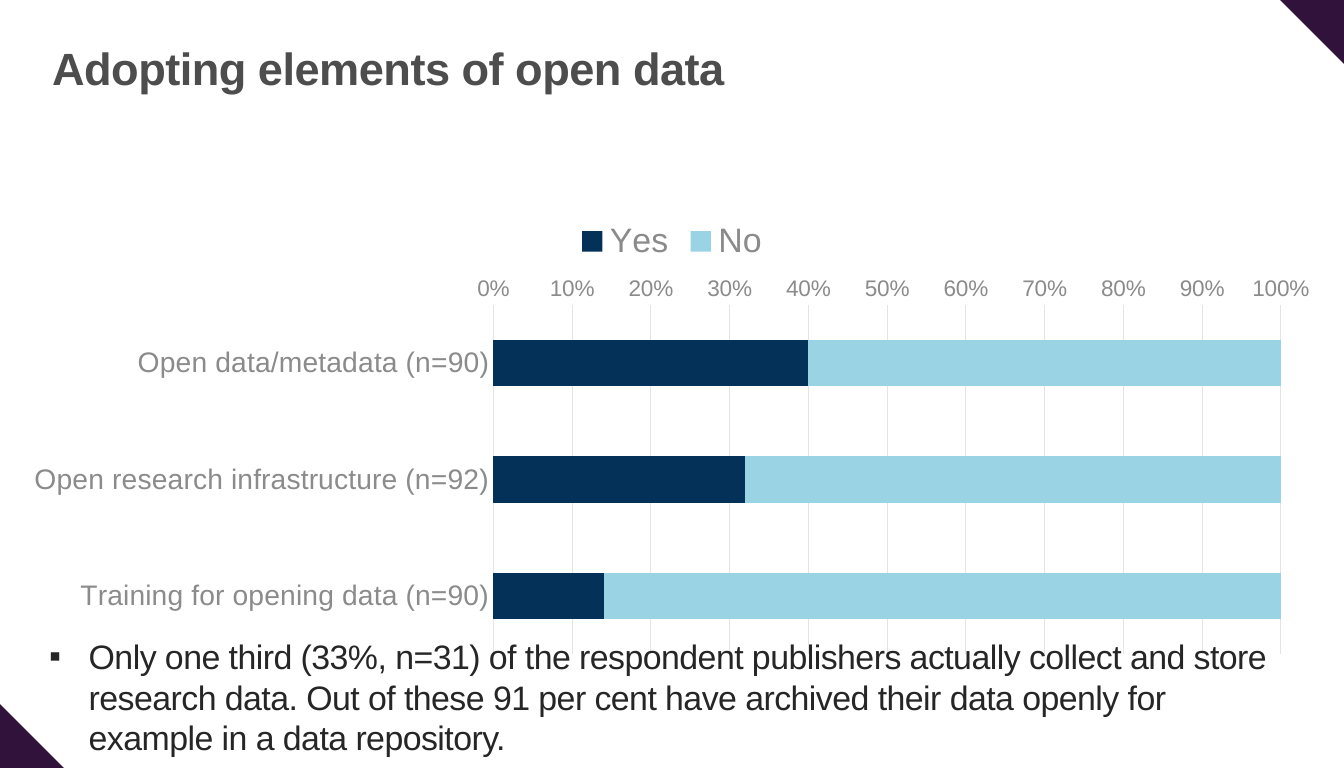
"""Build the slide on adopting elements of open data, with a stacked bar chart."""
import pptx
import pptx.chart.data
import pptx.dml.color
import pptx.enum.chart
import pptx.enum.shapes
import pptx.enum.text
import pptx.oxml
import pptx.oxml.ns
import pptx.util

COLORS = {"corner": "30123A", "title": "4D4D4D", "body": "262626", "label": "8B8B8B",
          "grid": "E4E4E4", "Yes": "043158", "No": "99D3E4"}
FONT = "Arial"
ANSWERS = {"Yes": (0.4, 0.32, 0.14), "No": (0.6, 0.68, 0.86)}
PLOT_SHARES = {"x": 0.3655, "y": 0.2125, "w": 0.593, "h": 0.767}


def style_font(font, size, color, bold=False):
    font.name, font.size, font.bold = FONT, pptx.util.Pt(size), bold
    font.color.rgb = pptx.dml.color.RGBColor.from_string(COLORS[color])


def add_text(slide, box, text, size, color, bold=False):
    frame = slide.shapes.add_textbox(*box).text_frame
    frame.word_wrap = True
    frame.vertical_anchor = pptx.enum.text.MSO_ANCHOR.TOP
    frame.margin_left = frame.margin_right = pptx.util.Inches(0.04)
    frame.margin_top = frame.margin_bottom = pptx.util.Inches(0.04)
    frame.text = text
    paragraph = frame.paragraphs[0]
    for run in paragraph.runs:
        style_font(run.font, size, color, bold)
        run.font._element.set("spc", "-40")
    return paragraph


deck = pptx.Presentation()
deck.slide_width, deck.slide_height = pptx.util.Inches(13.23), pptx.util.Inches(7.56)
width, height = deck.slide_width, deck.slide_height
slide = deck.slides.add_slide(deck.slide_layouts[6])

corner_size = pptx.util.Inches(0.89)
for center_x, center_y in ((0, height), (width, 0)):
    corner = slide.shapes.add_shape(
        pptx.enum.shapes.MSO_SHAPE.RECTANGLE, center_x - corner_size // 2,
        center_y - corner_size // 2, corner_size, corner_size)
    corner.rotation = 45
    corner.shadow.inherit = False
    corner.fill.solid()
    corner.fill.fore_color.rgb = pptx.dml.color.RGBColor.from_string(COLORS["corner"])
    corner.line.fill.background()

title_box = [int(width * 0.0357), int(height * 0.0525), int(width * 0.928), int(height * 0.155)]
title = add_text(slide, title_box, "Adopting elements of open data", 32, "title", bold=True)
title.line_spacing = 0.95

adoption = pptx.chart.data.CategoryChartData(number_format="0%")
adoption.categories = ["Open data/metadata (n=90)", "Open research infrastructure (n=92)",
                       "Training for opening data (n=90)"]
for answer, shares in ANSWERS.items():
    adoption.add_series(answer, shares)
chart = slide.shapes.add_chart(
    pptx.enum.chart.XL_CHART_TYPE.BAR_STACKED, int(width * 0.006), int(height * 0.271),
    int(width * 0.988), int(height * 0.593), adoption).chart
style_font(chart.font, 10, "title")
chart.has_title = False
chart.has_legend = True
chart.legend.position = pptx.enum.chart.XL_LEGEND_POSITION.TOP
chart.legend.include_in_layout = False
style_font(chart.legend.font, 24, "label")

bars = chart.plots[0]
bars.gap_width, bars.overlap, bars.vary_by_categories = 150, 100, False
for series in bars.series:
    series.format.fill.solid()
    series.format.fill.fore_color.rgb = pptx.dml.color.RGBColor.from_string(COLORS[series.name])

topics, percent = chart.category_axis, chart.value_axis
topics.reverse_order = True
percent.minimum_scale, percent.maximum_scale, percent.major_unit = 0, 1, 0.1
percent.has_major_gridlines = True
percent.tick_labels.number_format = "0%"
percent.tick_labels.number_format_is_linked = False
percent.format.line.fill.background()
for axis, size in ((topics, 20), (percent, 16)):
    axis.major_tick_mark = axis.minor_tick_mark = pptx.enum.chart.XL_TICK_MARK.NONE
    style_font(axis.tick_labels.font, size, "label")
for line in (topics.format.line, percent.major_gridlines.format.line):
    line.width = pptx.util.Pt(0.75)
    line.color.rgb = pptx.dml.color.RGBColor.from_string(COLORS["grid"])

plot_area = chart._chartSpace.chart.plotArea
for automatic in plot_area.findall(pptx.oxml.ns.qn("c:layout")):
    plot_area.remove(automatic)
settings = '<c:layoutTarget val="inner"/><c:xMode val="edge"/><c:yMode val="edge"/>'
settings += "".join(f'<c:{side} val="{share}"/>' for side, share in PLOT_SHARES.items())
plot_area.insert(0, pptx.oxml.parse_xml(
    f'<c:layout {pptx.oxml.ns.nsdecls("c")}><c:manualLayout>{settings}</c:manualLayout></c:layout>'))

finding_box = [int(width * 0.0335), int(height * 0.8225), int(width * 0.934), int(height * 0.2)]
finding = add_text(
    slide, finding_box,
    "Only one third (33%, n=31) of the respondent publishers actually collect and store "
    "research data. Out of these 91 per cent have archived their data openly for example "
    "in a data repository.", 24, "body")
finding.space_after = pptx.util.Pt(6)
indent = pptx.util.Inches(0.39)
properties = finding._p.get_or_add_pPr()
properties.set("marL", str(indent))
properties.set("indent", str(-indent))
for tag, setting in (("buFont", f'typeface="{FONT}"'), ("buChar", 'char="▪"')):
    properties.append(pptx.oxml.parse_xml(f'<a:{tag} {pptx.oxml.ns.nsdecls("a")} {setting}/>'))

deck.save("out.pptx")
